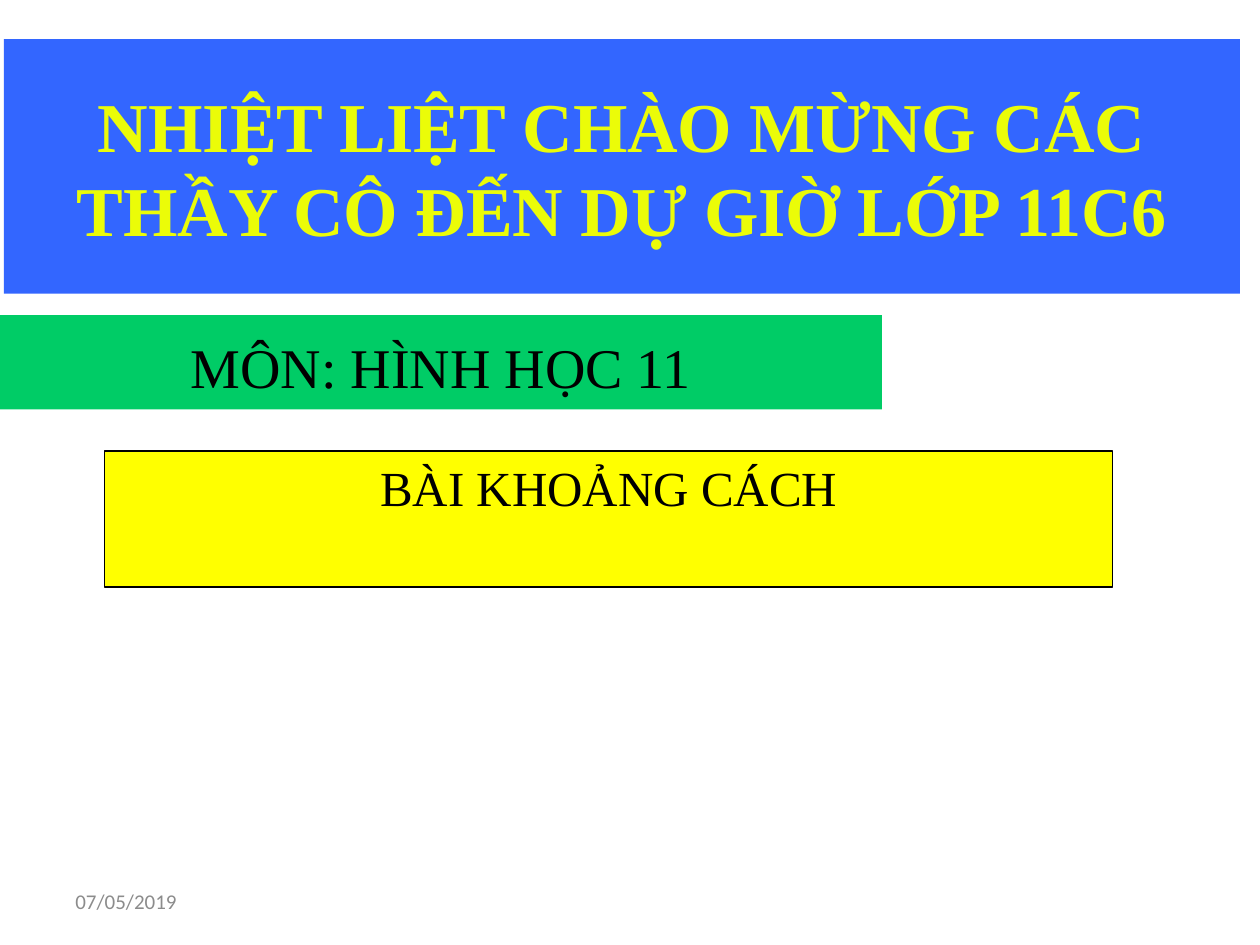
from pptx import Presentation
from pptx.dml.color import RGBColor
from pptx.enum.shapes import MSO_SHAPE
from pptx.enum.text import MSO_ANCHOR, PP_ALIGN
from pptx.util import Inches, Pt

RECTANGLE = MSO_SHAPE.RECTANGLE
TOP, MIDDLE = MSO_ANCHOR.TOP, MSO_ANCHOR.MIDDLE
LEFT, CENTER = PP_ALIGN.LEFT, PP_ALIGN.CENTER
SERIF, SANS = "Times New Roman", "Calibri"
COLORS = {
    "blue": "3366FF",
    "green": "00CC66",
    "yellow": "FFFF00",
    "lemon": "EBFC08",
    "black": "000000",
    "gray": "8C8C8C",
}


def color(name):
    return RGBColor.from_string(COLORS[name])


def write(box, text, size, ink, font=SERIF, bold=False, align=CENTER, anchor=TOP):
    frame = box.text_frame
    frame.text = text
    frame.word_wrap = True
    frame.vertical_anchor = anchor
    para = frame.paragraphs[0]
    para.alignment = align
    span = para.runs[0]
    span.font.name = font
    span.font.size = Pt(size)
    span.font.bold = bold
    span.font.color.rgb = color(ink)


def add_banner(slide, left, top, width, height, fill, border=None):
    banner = slide.shapes.add_shape(
        RECTANGLE, Inches(left), Inches(top), Inches(width), Inches(height)
    )
    banner.shadow.inherit = False
    banner.fill.solid()
    banner.fill.fore_color.rgb = color(fill)
    if border:
        banner.line.color.rgb = color(border)
        banner.line.width = Pt(0.75)
    else:
        banner.line.fill.background()
    return banner


def add_date(slide, text):
    box = slide.shapes.add_textbox(Inches(0.5), Inches(6.95), Inches(2.33), Inches(0.4))
    write(box, text, 12, "gray", font=SANS, align=LEFT, anchor=MIDDLE)


def main():
    deck = Presentation()
    deck.slide_width, deck.slide_height = Inches(10), Inches(7.5)
    slide = deck.slides.add_slide(deck.slide_layouts[6])

    welcome = add_banner(slide, 0.03, 0.31, 9.81, 2.02, "blue")
    write(welcome, "NHIỆT LIỆT CHÀO MỪNG CÁC THẦY CÔ ĐẾN DỰ GIỜ LỚP 11C6",
          40, "lemon", bold=True, anchor=MIDDLE)

    subject = add_banner(slide, 0, 2.5, 7, 0.75, "green")
    write(subject, "MÔN: HÌNH HỌC 11", 32, "black")
    subject.text_frame.margin_top = Inches(0.14)

    lesson = add_banner(slide, 0.83, 3.58, 8, 1.08, "yellow", border="black")
    write(lesson, "BÀI KHOẢNG CÁCH", 28, "black")

    add_date(slide, "07/05/2019")
    deck.save("out.pptx")


if __name__ == "__main__":
    main()
